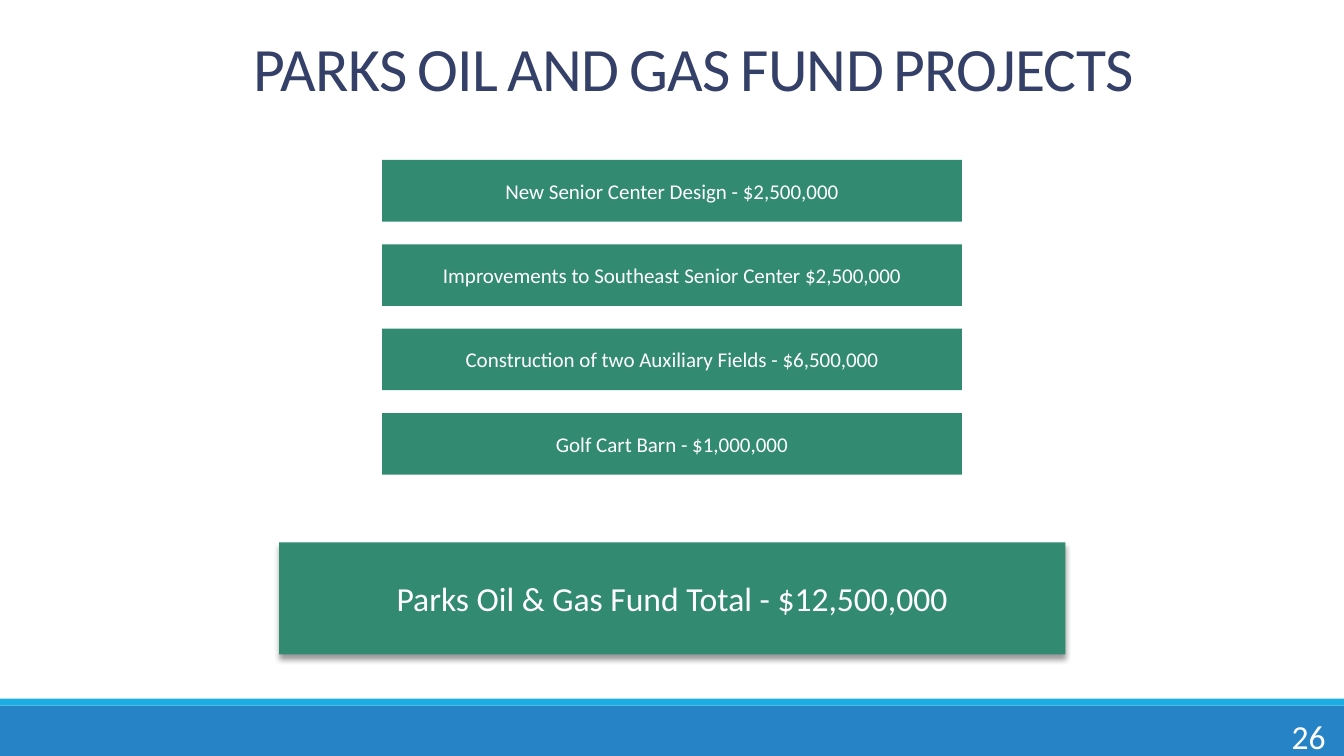
from dataclasses import dataclass

from lxml import etree
from pptx import Presentation
from pptx.dml.color import RGBColor
from pptx.enum import shapes, text
from pptx.oxml import ns
from pptx.util import Pt


@dataclass(frozen=True)
class Theme:
    font: str = "Calibri"
    navy: str = "344068"
    green: str = "328B71"
    blue: str = "2683C6"
    cyan: str = "1CADE4"
    white: str = "FFFFFF"
    shadow: str = "000000"
    title_size: float = 44
    total_size: float = 24
    project_size: float = 15
    number_size: float = 24


THEME = Theme()
WIDTH, HEIGHT = 960, 540
PROJECTS = [
    "New Senior Center Design - $2,500,000",
    "Improvements to Southeast Senior Center $2,500,000",
    "Construction of two Auxiliary Fields - $6,500,000",
    "Golf Cart Barn - $1,000,000",
]
PROJECT_TOP, PROJECT_PITCH = 114.3, 60.25


def set_text(sp, content, size, color, align=text.PP_ALIGN.CENTER):
    tf = sp.text_frame
    tf.word_wrap = True
    tf.vertical_anchor = text.MSO_ANCHOR.MIDDLE
    p = tf.paragraphs[0]
    p.text = content
    p.alignment = align
    p.font.name = THEME.font
    p.font.size = Pt(size)
    p.font.color.rgb = RGBColor.from_string(color)
    return p


def add_bar(s, left, top, width, height, color):
    sp = s.shapes.add_shape(shapes.MSO_SHAPE.RECTANGLE,
                            Pt(left), Pt(top), Pt(width), Pt(height))
    sp.shadow.inherit = False
    sp.fill.solid()
    sp.fill.fore_color.rgb = RGBColor.from_string(color)
    sp.line.fill.background()
    return sp


def add_label(s, left, top, width, height):
    return s.shapes.add_textbox(Pt(left), Pt(top), Pt(width), Pt(height))


def drop_shadow(sp):
    """Cast a soft shadow straight down."""
    effects = sp._element.spPr.find(ns.qn("a:effectLst"))
    outer = etree.SubElement(effects, ns.qn("a:outerShdw"),
                             blurRad=str(Pt(4)), dist=str(Pt(3)),
                             dir="5400000", rotWithShape="0")
    color = etree.SubElement(outer, ns.qn("a:srgbClr"), val=THEME.shadow)
    etree.SubElement(color, ns.qn("a:alpha"), val="40000")


def add_title(s, content):
    sp = add_label(s, 29.5, 9.4, 901.4, 85.7)
    p = set_text(sp, content, THEME.title_size, THEME.navy)
    p.line_spacing = 0.85
    sp.text_frame.margin_left = Pt(22)
    r_pr = p.runs[0].font._element
    r_pr.set("spc", "-50")
    r_pr.set("cap", "small")


def add_footer(s, number):
    add_bar(s, 0, 504, WIDTH, 36, THEME.blue)
    add_bar(s, 0, 499, WIDTH, 5, THEME.cyan)
    set_text(add_label(s, 851, 511, 103, 29), number,
             THEME.number_size, THEME.white, text.PP_ALIGN.RIGHT)


def add_projects(s):
    for i, project in enumerate(PROJECTS):
        sp = add_bar(s, 273, PROJECT_TOP + i * PROJECT_PITCH, 414, 44, THEME.green)
        set_text(sp, project, THEME.project_size, THEME.white)


def add_total(s, content):
    sp = add_bar(s, 199.4, 387.4, 561.6, 80, THEME.green)
    drop_shadow(sp)
    set_text(sp, content, THEME.total_size, THEME.white)


def main():
    prs = Presentation()
    prs.slide_width, prs.slide_height = Pt(WIDTH), Pt(HEIGHT)
    s = prs.slides.add_slide(prs.slide_layouts[6])
    add_footer(s, "26")
    add_title(s, "PARKS OIL AND GAS FUND PROJECTS")
    add_projects(s)
    add_total(s, "Parks Oil & Gas Fund Total - $12,500,000")
    prs.save("out.pptx")


if __name__ == "__main__":
    main()
